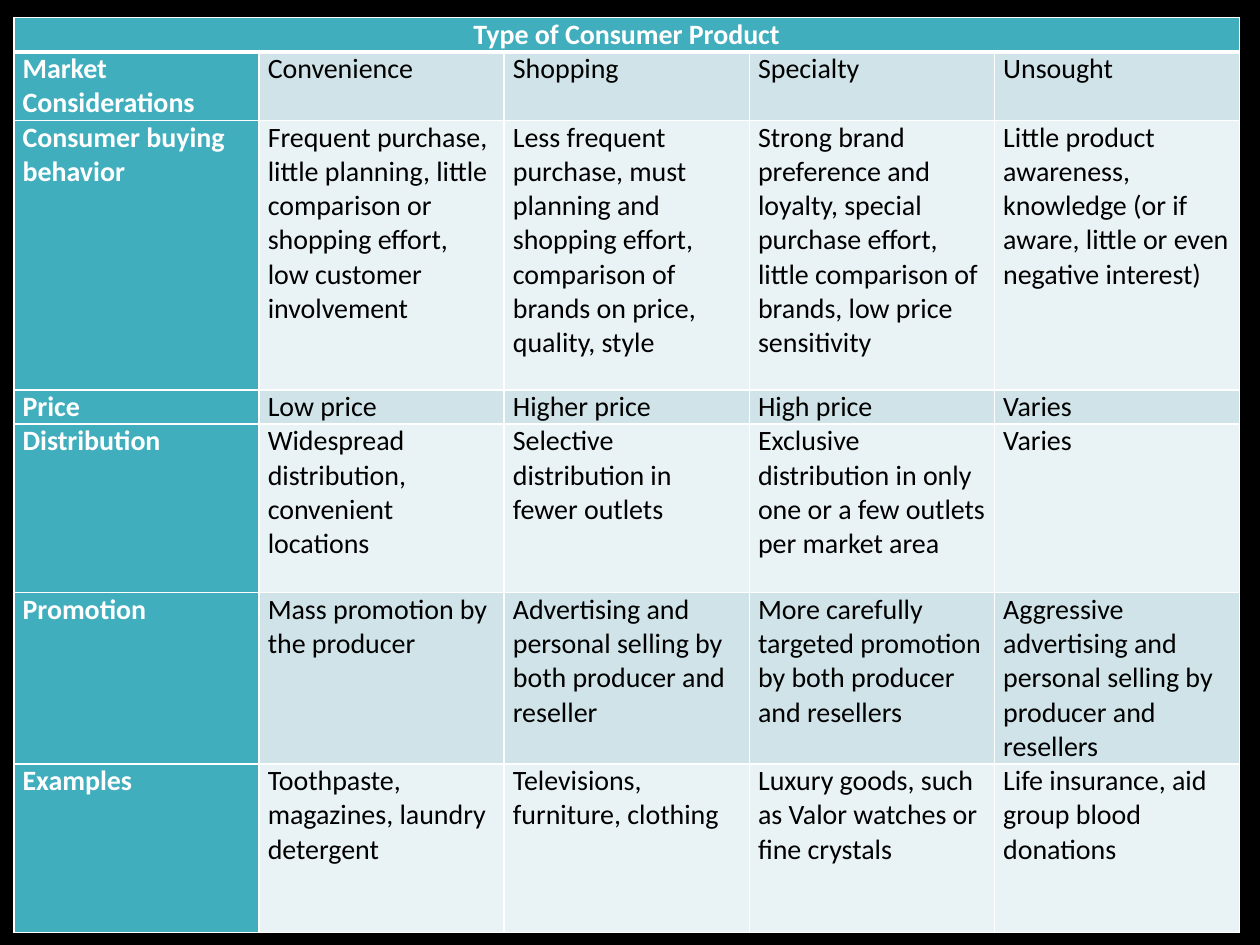
from pptx import Presentation
from pptx.dml.color import RGBColor
from pptx.enum.text import PP_ALIGN
from pptx.oxml import parse_xml
from pptx.oxml.ns import nsdecls
from pptx.util import Inches, Pt

COLORS = {"back": "000000", "head": "41AEBD", "band": "CFE3E8", "plain": "E9F2F4",
          "light": "FFFFFF", "dark": "000000"}
FONT = "Calibri"
WIDTH, HEIGHT = 10, 7.5
TABLE_BOX = (0.11, 0.14, 9.73, 7.22)
ROW_UNITS = [1, 2, 8, 1, 5, 5, 5]  # row heights, in lines of text

TITLE = "Type of Consumer Product"
ROWS = [
    ["Market Considerations", "Convenience", "Shopping", "Specialty", "Unsought"],
    ["Consumer buying behavior",
     "Frequent purchase, little planning, little comparison or shopping effort, "
     "low customer involvement",
     "Less frequent purchase, must planning and shopping effort, "
     "comparison of brands on price, quality, style",
     "Strong brand preference and loyalty, special purchase effort, "
     "little comparison of brands, low price sensitivity",
     "Little product awareness, knowledge (or if aware, little or even negative interest)"],
    ["Price", "Low price", "Higher price", "High price", "Varies"],
    ["Distribution",
     "Widespread distribution, convenient locations",
     "Selective distribution in fewer outlets",
     "Exclusive distribution in only one or a few outlets per market area",
     "Varies"],
    ["Promotion",
     "Mass promotion by the producer",
     "Advertising and personal selling by both producer and reseller",
     "More carefully targeted promotion by both producer and resellers",
     "Aggressive advertising and personal selling by producer and resellers"],
    ["Examples",
     "Toothpaste, magazines, laundry detergent",
     "Televisions, furniture, clothing",
     "Luxury goods, such as Valor watches or fine crystals",
     "Life insurance, aid group blood donations"],
]


def rgb(name):
    return RGBColor.from_string(COLORS[name])


def write(tf, text, color="dark", bold=False, size=16, align=PP_ALIGN.LEFT):
    p = tf.paragraphs[0]
    p.alignment = align
    r = p.add_run()
    r.text = text
    r.font.name, r.font.size, r.font.bold = FONT, Pt(size), bold
    r.font.color.rgb = rgb(color)


def style_cell(cell, fill, top=1, bottom=1):
    cell.margin_left = cell.margin_right = Inches(0.07)
    cell.margin_top = cell.margin_bottom = 0
    cell.fill.solid()
    cell.fill.fore_color.rgb = rgb(fill)
    # Borders come before the fill in the cell properties
    tcPr = cell._tc.get_or_add_tcPr()
    for i, (side, width) in enumerate([("L", 1), ("R", 1), ("T", top), ("B", bottom)]):
        tcPr.insert(i, parse_xml(
            f'<a:ln{side} {nsdecls("a")} w="{Pt(width)}"><a:solidFill>'
            f'<a:srgbClr val="{COLORS["light"]}"/></a:solidFill></a:ln{side}>'))


def product_table(s, box):
    left, top, width, height = box
    n_cols = len(ROWS[0])
    table = s.shapes.add_table(len(ROW_UNITS), n_cols, *map(Inches, box)).table
    for col in table.columns:
        col.width = Inches(width / n_cols)
    for row, units in zip(table.rows, ROW_UNITS):
        row.height = Inches(height * units / sum(ROW_UNITS))

    # Title row across all columns
    for c in range(n_cols):
        style_cell(table.cell(0, c), "head", bottom=3)
    table.cell(0, 0).merge(table.cell(0, n_cols - 1))
    write(table.cell(0, 0).text_frame, TITLE, color="light", bold=True,
          align=PP_ALIGN.CENTER)

    # Label column and banded body
    for i, texts in enumerate(ROWS, start=1):
        for c, text in enumerate(texts):
            cell = table.cell(i, c)
            label = c == 0
            fill = "head" if label else "band" if i % 2 else "plain"
            style_cell(cell, fill, top=3 if i == 1 else 1)
            write(cell.text_frame, text, color="light" if label else "dark", bold=label)


def main():
    prs = Presentation()
    prs.slide_width, prs.slide_height = Inches(WIDTH), Inches(HEIGHT)
    s = prs.slides.add_slide(prs.slide_layouts[6])
    s.background.fill.solid()
    s.background.fill.fore_color.rgb = rgb("back")
    product_table(s, TABLE_BOX)
    prs.save("out.pptx")


if __name__ == "__main__":
    main()
